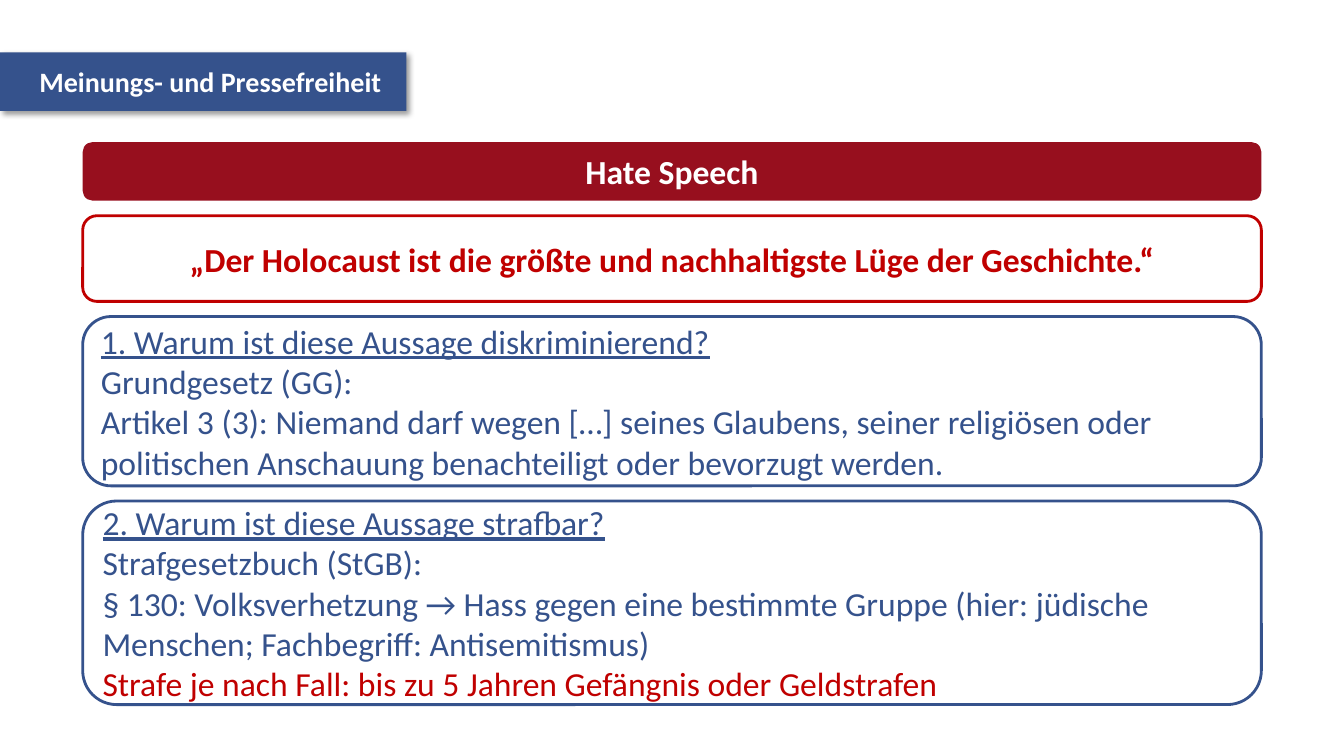
"""Build a slide on hate speech and the limits of free expression."""
from lxml import etree
from pptx import Presentation
from pptx import util as u
from pptx.dml.color import RGBColor
from pptx.enum import shapes, text
from pptx.oxml import ns

BLUE, DARK_RED, RED, WHITE = "35528C", "970F1E", "C00000", "FFFFFF"
LEFT, TOP, WIDTH, GAP = 0.82, 1.41, 11.69, 0.15

TITLE = "Meinungs- und Pressefreiheit"
BANNERS = [
    {"text": "Hate Speech", "height": 0.58, "fill": DARK_RED, "color": WHITE},
    {"text": "„Der Holocaust ist die größte und nachhaltigste Lüge der Geschichte.“",
     "height": 0.85, "line": RED, "color": RED},
]
QUESTIONS = [
    {"height": 1.68, "lines": [
        ("1. Warum ist diese Aussage diskriminierend?", BLUE),
        ("Grundgesetz (GG):", BLUE),
        ("Artikel 3 (3): Niemand darf wegen […] seines Glaubens, seiner religiösen oder "
         "politischen Anschauung benachteiligt oder bevorzugt werden.", BLUE),
    ]},
    {"height": 2.02, "lines": [
        ("2. Warum ist diese Aussage strafbar?", BLUE),
        ("Strafgesetzbuch (StGB):", BLUE),
        ("§ 130: Volksverhetzung → Hass gegen eine bestimmte Gruppe (hier: jüdische "
         "Menschen; Fachbegriff: Antisemitismus)", BLUE),
        ("Strafe je nach Fall: bis zu 5 Jahren Gefängnis oder Geldstrafen", RED),
    ]},
]


def paint(color_format, color):
    color_format.rgb = RGBColor.from_string(color)


def write(para, words, size, color, bold=False, underline=False, align=text.PP_ALIGN.LEFT):
    para.text = words
    para.alignment = align
    for span in para.runs:
        font = span.font
        font.name, font.size = "Calibri", u.Pt(size)
        font.bold, font.underline = bold, underline
        paint(font.color, color)


def add_shadow(shape):
    effects = etree.SubElement(shape._element.spPr, ns.qn("a:effectLst"))
    shadow = etree.SubElement(effects, ns.qn("a:outerShdw"), blurRad=str(u.Pt(4)),
                              dist=str(u.Pt(3)), dir=str(45 * 60000), algn="tl", rotWithShape="0")
    black = etree.SubElement(shadow, ns.qn("a:srgbClr"), val="000000")
    etree.SubElement(black, ns.qn("a:alpha"), val="40000")


def add_panel(page, top, height, fill=None, line=None):
    panel = page.shapes.add_shape(shapes.MSO_SHAPE.ROUNDED_RECTANGLE, u.Inches(LEFT),
                                  u.Inches(top), u.Inches(WIDTH), u.Inches(height))
    panel.shadow.inherit = False
    if fill:
        panel.fill.solid()
        paint(panel.fill.fore_color, fill)
    else:
        panel.fill.background()
    if line:
        paint(panel.line.color, line)
        panel.line.width = u.Pt(2)
    else:
        panel.line.fill.background()
    panel.text_frame.word_wrap = True
    panel.text_frame.vertical_anchor = text.MSO_ANCHOR.MIDDLE
    return panel.text_frame


def add_title(page):
    title = page.shapes.title
    title.left, title.top = u.Inches(0), u.Inches(0.52)
    title.width, title.height = u.Inches(4.03), u.Inches(0.58)
    title.fill.solid()
    paint(title.fill.fore_color, BLUE)
    add_shadow(title)
    frame = title.text_frame
    frame.margin_left, frame.margin_right = u.Inches(0.39), u.Inches(0.2)
    frame.margin_top = frame.margin_bottom = u.Inches(0.12)
    frame.word_wrap = False
    frame.auto_size = text.MSO_AUTO_SIZE.NONE
    frame.vertical_anchor = text.MSO_ANCHOR.TOP
    write(frame.paragraphs[0], TITLE, 20, WHITE, bold=True)


def main():
    deck = Presentation()
    deck.slide_width, deck.slide_height = u.Inches(13.33), u.Inches(7.5)
    page = deck.slides.add_slide(deck.slide_layouts[5])
    add_title(page)
    top = TOP
    for banner in BANNERS:
        frame = add_panel(page, top, banner["height"], banner.get("fill"), banner.get("line"))
        write(frame.paragraphs[0], banner["text"], 24, banner["color"], bold=True,
              align=text.PP_ALIGN.CENTER)
        top += banner["height"] + GAP
    for question in QUESTIONS:
        frame = add_panel(page, top, question["height"], line=BLUE)
        for index, (words, color) in enumerate(question["lines"]):
            para = frame.add_paragraph() if index else frame.paragraphs[0]
            write(para, words, 24, color, underline=index == 0)
        top += question["height"] + GAP
    deck.save("out.pptx")


if __name__ == "__main__":
    main()
